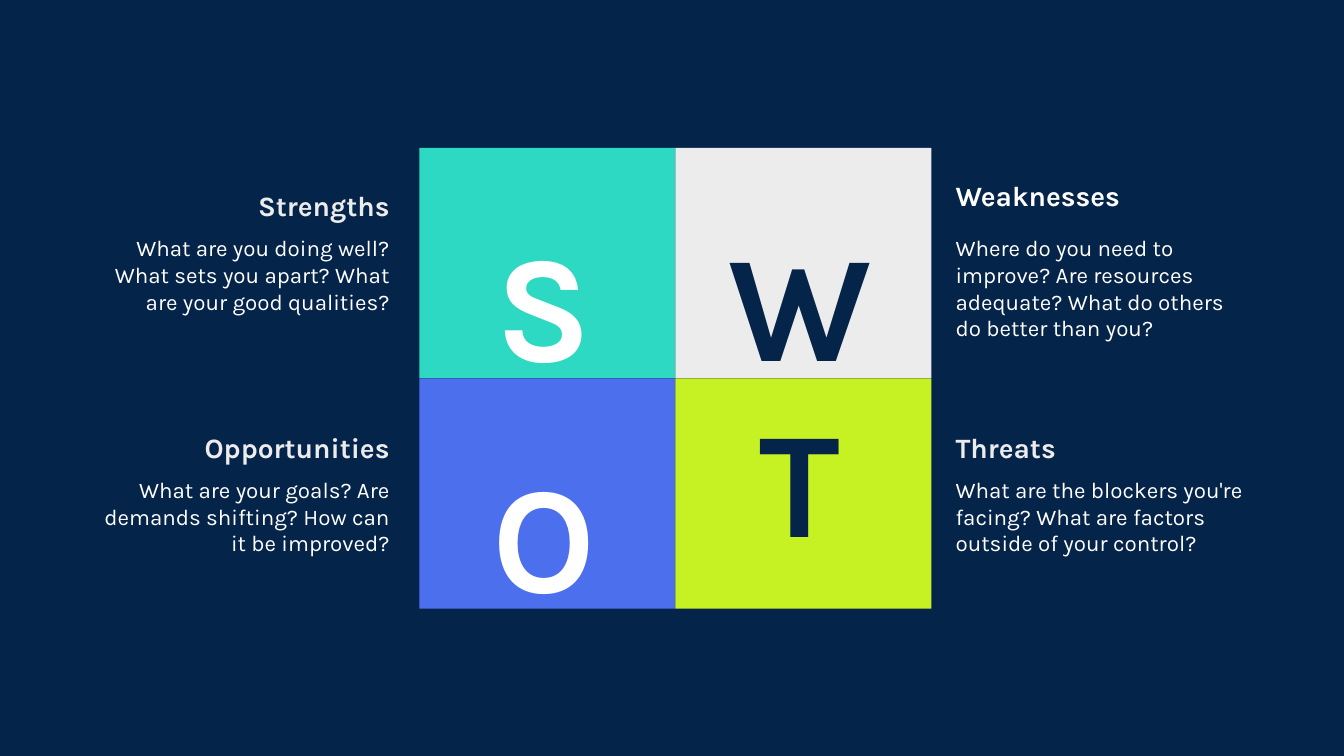
from dataclasses import dataclass

import pptx
import pptx.dml.color
import pptx.enum.shapes
import pptx.enum.text
import pptx.util

Inches = pptx.util.Inches
ALIGN = pptx.enum.text.PP_ALIGN


@dataclass(frozen=True)
class Theme:
    font: str = "Karla"
    navy: str = "052449"
    white: str = "FFFFFF"
    mist: str = "EDECED"
    teal: str = "2ED9C3"
    blue: str = "4B6FED"
    lime: str = "C6F223"
    letter_size: int = 81
    heading_size: int = 15
    body_size: int = 12


THEME = Theme()

# Row by row: letter, tile fill, letter colour, letter line spacing
TILES = [
    ("S", THEME.teal, THEME.white, 1.3),
    ("W", THEME.mist, THEME.navy, 1.3),
    ("O", THEME.blue, THEME.white, 1.3),
    ("T", THEME.lime, THEME.navy, None),
]

# Row by row: heading, question, heading colour, heading line spacing, body height
CAPTIONS = [
    ("Strengths", "What are you doing well? What sets you apart? What are your good qualities?",
     THEME.mist, 1.3, 0.61),
    ("Weaknesses", "Where do you need to improve? Are resources adequate? "
     "What do others do better than you?", THEME.white, None, 0.81),
    ("Opportunities", "What are your goals? Are demands shifting? How can it be improved?",
     THEME.mist, 1.3, 0.61),
    ("Threats", "What are the blockers you're facing? What are factors outside of your control?",
     THEME.mist, 1.3, 0.61),
]


def rgb(value):
    return pptx.dml.color.RGBColor.from_string(value)


def add_text(shapes, text, left, top, width, height, *, size, color,
             bold=False, align=ALIGN.LEFT, spacing=None):
    box = shapes.add_textbox(Inches(left), Inches(top), Inches(width), Inches(height))
    frame = box.text_frame
    frame.word_wrap = True
    frame.auto_size = pptx.enum.text.MSO_AUTO_SIZE.SHAPE_TO_FIT_TEXT
    frame.margin_left = frame.margin_right = frame.margin_top = frame.margin_bottom = 0
    paragraph = frame.paragraphs[0]
    paragraph.alignment = align
    if spacing:
        paragraph.line_spacing = spacing
    run = paragraph.add_run()
    run.text = text
    run.font.name = THEME.font
    run.font.size = pptx.util.Pt(size)
    run.font.bold = bold
    run.font.color.rgb = rgb(color)


def add_board(slide, left, top, width, height):
    """Two-by-two block of lettered tiles."""
    tile_width, tile_height = width / 2, height / 2
    for index, (letter, fill, color, spacing) in enumerate(TILES):
        row, column = divmod(index, 2)
        x, y = left + column * tile_width, top + row * tile_height
        tile = slide.shapes.add_shape(
            pptx.enum.shapes.MSO_SHAPE.RECTANGLE,
            Inches(x), Inches(y), Inches(tile_width), Inches(tile_height))
        tile.shadow.inherit = False
        tile.fill.solid()
        tile.fill.fore_color.rgb = rgb(fill)
        tile.line.fill.background()
        add_text(slide.shapes, letter, x + 0.35, y + 0.06, 1.15, 1.36,
                 size=THEME.letter_size, color=color, bold=True,
                 align=ALIGN.CENTER, spacing=spacing)


def add_caption(slide, caption, left, top, width, align):
    """Heading with its question below."""
    heading, question, color, spacing, body_height = caption
    group = slide.shapes.add_group_shape()
    add_text(group.shapes, heading, left, top, width, 0.25, size=THEME.heading_size,
             color=color, bold=True, align=align, spacing=spacing)
    add_text(group.shapes, question, left, top + 0.41, width, body_height,
             size=THEME.body_size, color=THEME.white, align=align)


def add_captions(slide, left, top, width, row_pitch):
    """Captions on both sides of the board, aligned towards it."""
    column_width = 2.15
    columns = [(left, ALIGN.RIGHT), (left + width - column_width, ALIGN.LEFT)]
    for index, caption in enumerate(CAPTIONS):
        row, column = divmod(index, 2)
        x, align = columns[column]
        add_caption(slide, caption, x, top + row * row_pitch, column_width, align)


def main():
    presentation = pptx.Presentation()
    presentation.slide_width = Inches(10)
    presentation.slide_height = presentation.slide_width * 9 // 16
    slide = presentation.slides.add_slide(presentation.slide_layouts[6])
    slide.background.fill.solid()
    slide.background.fill.fore_color.rgb = rgb(THEME.navy)

    add_board(slide, 3.12, 1.1, 3.81, 3.43)
    add_captions(slide, 0.75, 1.33, 8.51, 1.8)
    presentation.save("out.pptx")


if __name__ == "__main__":
    main()
